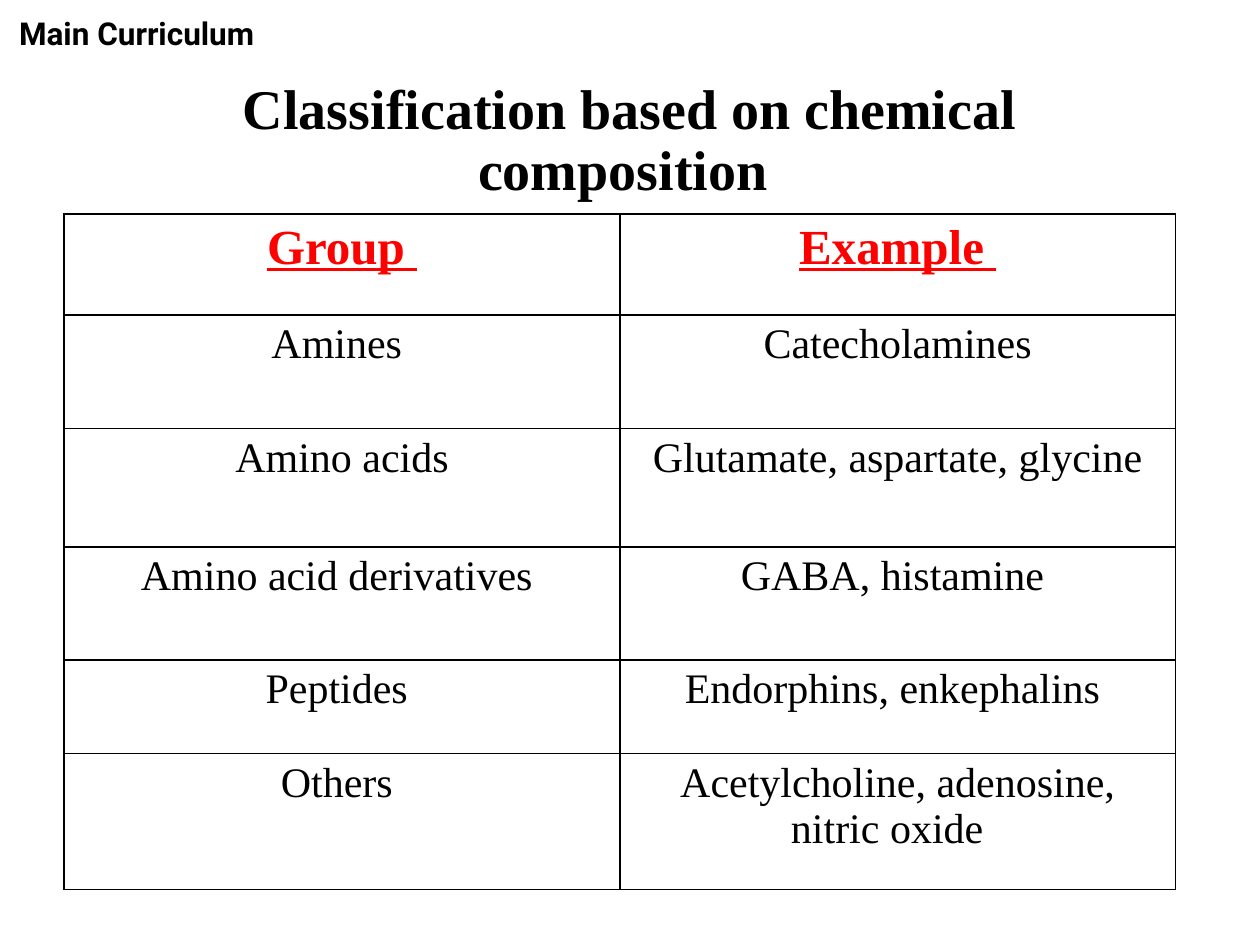
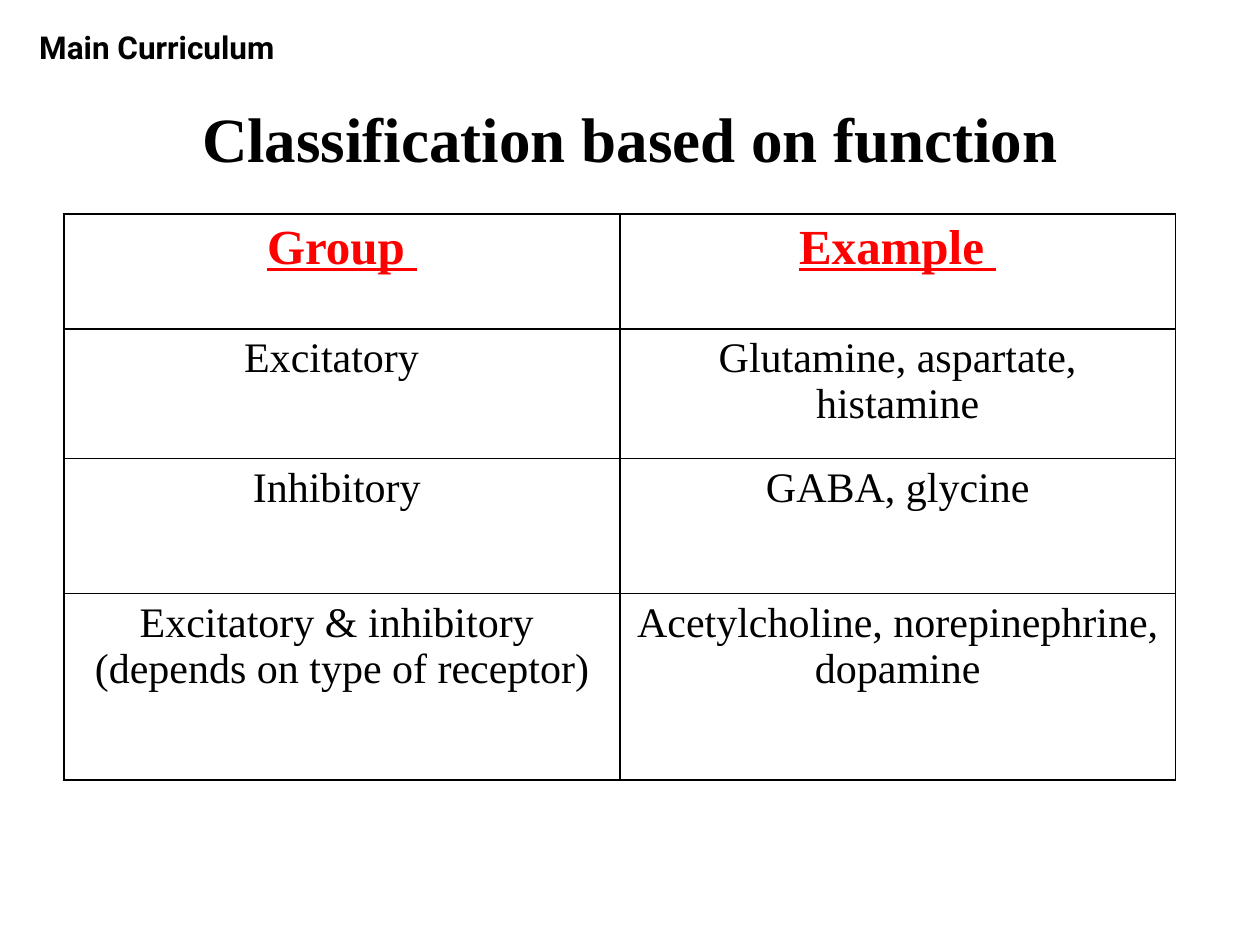
"""Build two slides that classify neurotransmitters in tables."""
from lxml import etree
from pptx import Presentation
from pptx import util as u
from pptx.dml.color import RGBColor
from pptx.enum import text
from pptx.oxml.ns import qn

SCALE = 9144
BLACK, RED = "000000", "FF0000"
SERIF, SANS = "Times New Roman", "Roboto"
HEAD = ("Group ", "Example ")


def px(n):
    return u.Emu(n * SCALE)


def hue(code):
    return RGBColor.from_string(code)


class Deck:
    def __init__(self):
        self.prs = Presentation()
        self.prs.slide_width, self.prs.slide_height = px(1000), px(750)
        self.slide = None

    def style(self, frame, size, font=SERIF, color=BLACK, bold=False, line=False, gap=None):
        for par in frame.paragraphs:
            par.alignment = text.PP_ALIGN.CENTER
            if gap:
                par.line_spacing = gap
            for run in par.runs:
                face = run.font
                face.name, face.size = font, u.Pt(size)
                face.bold, face.underline = bold, line
                face.color.rgb = hue(color)

    def title(self, words, size):
        self.slide = self.prs.slides.add_slide(self.prs.slide_layouts[5])
        box = self.slide.shapes.title
        box.left, box.top, box.width, box.height = map(px, (69, 40, 862, 145))
        frame = box.text_frame
        frame.text = words
        frame.word_wrap = True
        frame.auto_size = text.MSO_AUTO_SIZE.NONE
        frame.vertical_anchor = text.MSO_ANCHOR.MIDDLE
        self.style(frame, size, bold=True, gap=0.9)

    def label(self, left, top, words="Main Curriculum"):
        box = self.slide.shapes.add_textbox(*map(px, (left, top, 215, 37)))
        frame = box.text_frame
        frame.text = words
        frame.word_wrap = False
        frame.auto_size = text.MSO_AUTO_SIZE.SHAPE_TO_FIT_TEXT
        self.style(frame, 18, SANS, bold=True, gap=0.9)

    def border(self, cell):
        props = cell._tc.get_or_add_tcPr()
        for spot, side in enumerate("LRTB"):
            line = etree.Element(qn("a:ln" + side), w=str(u.Pt(1)))
            fill = etree.SubElement(line, qn("a:solidFill"))
            etree.SubElement(fill, qn("a:srgbClr"), val=BLACK)
            props.insert(spot, line)

    def table(self, highs, rows):
        rows = [HEAD, *rows]
        frame = self.slide.shapes.add_table(
            len(rows), 2, px(51), px(170), px(882), px(sum(highs)))
        grid = frame.table
        grid.first_row = grid.horz_banding = False
        for col in grid.columns:
            col.width = px(441)
        for r, (high, row) in enumerate(zip(highs, rows)):
            grid.rows[r].height = px(high)
            for c, words in enumerate(row):
                cell = grid.cell(r, c)
                cell.text_frame.text = words
                cell.fill.background()
                self.border(cell)
                if r == 0:
                    self.style(cell.text_frame, 28, color=RED, bold=True, line=True)
                else:
                    self.style(cell.text_frame, 24)


def main():
    deck = Deck()
    deck.title("Classification based on chemical composition ", 32)
    deck.table((80, 90, 94, 90, 74, 108), [
        ("Amines ", "Catecholamines"),
        ("Amino acids", "Glutamate, aspartate, glycine"),
        ("Amino acid derivatives ", "GABA, histamine "),
        ("Peptides ", "Endorphins, enkephalins "),
        ("Others ", "Acetylcholine, adenosine, nitric oxide  "),
    ])
    deck.label(1, 10)

    deck.title("Classification based on function", 36)
    deck.table((91, 103, 107, 148), [
        ("Excitatory  ", "Glutamine, aspartate, histamine"),
        ("Inhibitory ", "GABA, glycine"),
        ("Excitatory & inhibitory \n(depends on type of receptor)",
         "Acetylcholine, norepinephrine, dopamine"),
    ])
    deck.label(17, 21)
    deck.prs.save("out.pptx")


if __name__ == "__main__":
    main()
